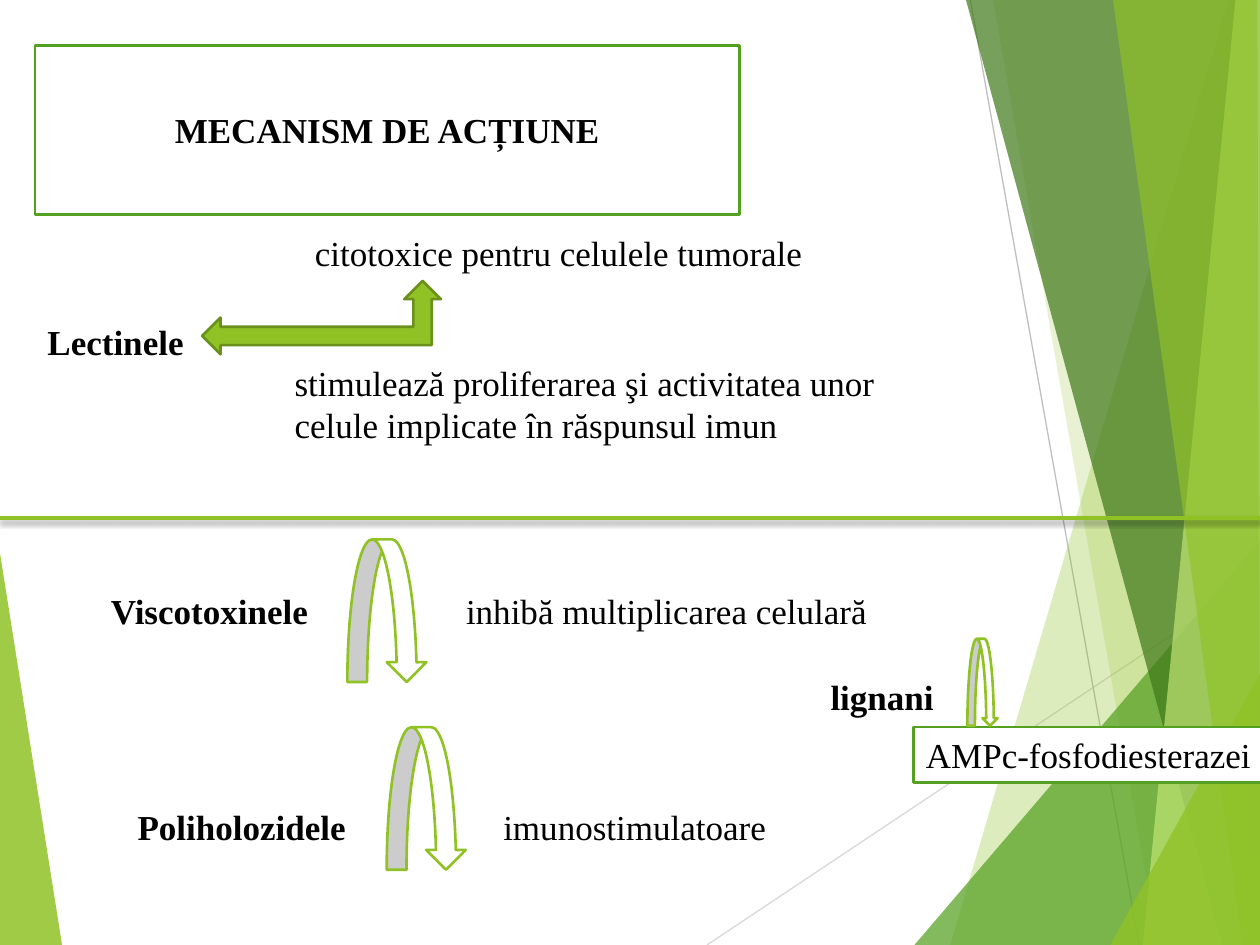
from lxml import etree
from pptx import Presentation
from pptx.dml.color import RGBColor
from pptx.enum.shapes import MSO_CONNECTOR, MSO_SHAPE
from pptx.enum.text import MSO_ANCHOR, PP_ALIGN
from pptx.oxml.ns import qn
from pptx.util import Pt

STRAIGHT = MSO_CONNECTOR.STRAIGHT
CURVED_ARROW = MSO_SHAPE.CURVED_DOWN_ARROW
LEFT_UP_ARROW = MSO_SHAPE.LEFT_UP_ARROW
RECTANGLE = MSO_SHAPE.RECTANGLE
MIDDLE = MSO_ANCHOR.MIDDLE
LEFT, CENTER = PP_ALIGN.LEFT, PP_ALIGN.CENTER

FONT = "Times New Roman"
COLORS = {
    "lime": "90C226",
    "green": "54A021",
    "forest": "3F7819",
    "pale": "C0E474",
    "olive": "6B901C",
    "gray": "BFBFBF",
    "light gray": "D9D9D9",
    "white": "FFFFFF",
    "black": "000000",
}


def color(name):
    return RGBColor.from_string(COLORS[name])


def format_text(paragraph, bold, alignment=LEFT):
    paragraph.alignment = alignment
    paragraph.font.name = FONT
    paragraph.font.size = Pt(20)
    paragraph.font.bold = bold
    paragraph.font.color.rgb = color("black")


presentation = Presentation()
presentation.slide_width = Pt(720)
presentation.slide_height = Pt(540)
slide = presentation.slides.add_slide(presentation.slide_layouts[5])
shapes = slide.shapes

background_lines = [
    ((404, 540), (720.5, 329), "light gray", 0.75),
    ((554.5, 0), (651, 540), "gray", 0.75),
]
facets = [
    ([(0, 316), (35.5, 540), (0, 540)], "lime", 85),
    ([(702, 0), (543, 540), (720, 540), (720, 0)], "lime", 30),
    ([(567.5, 0), (661.5, 540), (720, 540), (720, 0)], "lime", 20),
    ([(522.5, 540), (720, 309), (720, 540)], "green", 72),
    ([(552, 0), (698.5, 540), (720, 540), (720, 0)], "forest", 70),
    ([(706, 0), (653, 540), (720, 540), (720, 0)], "pale", 70),
    ([(636, 0), (710, 540), (720, 540), (718.5, 0)], "lime", 65),
    ([(634.5, 540), (720, 385), (720, 540)], "lime", 80),
]
divider = ((0, 296), (721, 296), "lime", 2)

connectors = []
for start, end, line_color, width in background_lines + [divider]:
    connector = shapes.add_connector(STRAIGHT, *map(Pt, start + end))
    connector.line.color.rgb = color(line_color)
    connector.line.width = Pt(width)
    effects = etree.SubElement(connector._element.spPr, qn("a:effectLst"))
    connectors.append(connector)

shadow = etree.SubElement(effects, qn("a:outerShdw"), blurRad=str(Pt(3)),
                          dist=str(Pt(2)), dir="5400000", rotWithShape="0")
shadow_color = etree.SubElement(shadow, qn("a:srgbClr"), val=COLORS["black"])
etree.SubElement(shadow_color, qn("a:alpha"), val="35000")

for points, fill_color, opacity in facets:
    corners = [(Pt(x), Pt(y)) for x, y in points]
    builder = shapes.build_freeform(*corners[0])
    builder.add_line_segments(corners[1:], close=True)
    facet = builder.convert_to_shape()
    facet.shadow.inherit = False
    facet.fill.solid()
    facet.fill.fore_color.rgb = color(fill_color)
    facet.line.fill.background()
    fill_element = facet._element.spPr.find(qn("a:solidFill"))
    etree.SubElement(fill_element[0], qn("a:alpha"), val=str(opacity * 1000))

shapes._spTree.append(connectors[-1]._element)

title = shapes.title
title.left, title.top, title.width, title.height = map(Pt, (20, 26, 402.5, 96.5))
ellipse = etree.SubElement(title._element.spPr, qn("a:prstGeom"), prst="ellipse")
etree.SubElement(ellipse, qn("a:avLst"))
title.fill.solid()
title.fill.fore_color.rgb = color("white")
title.line.color.rgb = color("green")
title.line.width = Pt(1.5)
title.text_frame.text = "MECANISM DE ACȚIUNE"
title.text_frame.vertical_anchor = MIDDLE
format_text(title.text_frame.paragraphs[0], True, CENTER)

labels = [
    ("Lectinele", 20, 179.5, 93, True, False),
    ("citotoxice pentru celulele tumorale", 172.8, 128.5, 294.5, False, False),
    ("stimulează proliferarea şi activitatea unor celule implicate în răspunsul imun",
     161.3, 203, 360, False, True),
    ("lignani", 467.5, 382.5, 74, True, False),
]
for text, left, top, width, bold, wrap in labels:
    label = shapes.add_textbox(Pt(left), Pt(top), Pt(width), Pt(55.5 if wrap else 31.5))
    label.text_frame.word_wrap = wrap
    label.text_frame.text = text
    format_text(label.text_frame.paragraphs[0], bold)

effect_rows = [
    ("Viscotoxinele", "inhibă multiplicarea celulară", 56.2, 333.5, 459, 203),
    ("Poliholozidele", "imunostimulatoare", 71.5, 456.5, 577.5, 209),
]
for compound, effect, left, top, width, tab_position in effect_rows:
    row = shapes.add_textbox(Pt(left), Pt(top), Pt(width), Pt(31.5))
    row.text_frame.word_wrap = True
    paragraph = row.text_frame.paragraphs[0]
    tabs = etree.SubElement(paragraph._p.get_or_add_pPr(), qn("a:tabLst"))
    etree.SubElement(tabs, qn("a:tab"), pos=str(Pt(tab_position)), algn="l")
    format_text(paragraph, False)
    name_run = paragraph.add_run()
    name_run.text = compound
    name_run.font.bold = True
    paragraph.add_run().text = "\t" + effect

outlined_shapes = [
    (LEFT_UP_ARROW, 115.5, 160.5, 136.5, 42, "lime", "olive", ""),
    (CURVED_ARROW, 198.5, 308.2, 45.3, 81.5, "white", "lime", ""),
    (CURVED_ARROW, 221, 415.5, 45.3, 81.5, "white", "lime", ""),
    (RECTANGLE, 522, 415.5, 201.5, 31.5, "white", "green", "AMPc-fosfodiesterazei"),
    (CURVED_ARROW, 552.8, 365, 17.3, 49.7, "white", "lime", ""),
]
for kind, left, top, width, height, fill_color, line_color, text in outlined_shapes:
    shape = shapes.add_shape(kind, Pt(left), Pt(top), Pt(width), Pt(height))
    shape.shadow.inherit = False
    shape.fill.solid()
    shape.fill.fore_color.rgb = color(fill_color)
    shape.line.color.rgb = color(line_color)
    shape.line.width = Pt(1.5)
    if text:
        shape.text_frame.word_wrap = False
        shape.text_frame.text = text
        format_text(shape.text_frame.paragraphs[0], False)

presentation.save("out.pptx")
